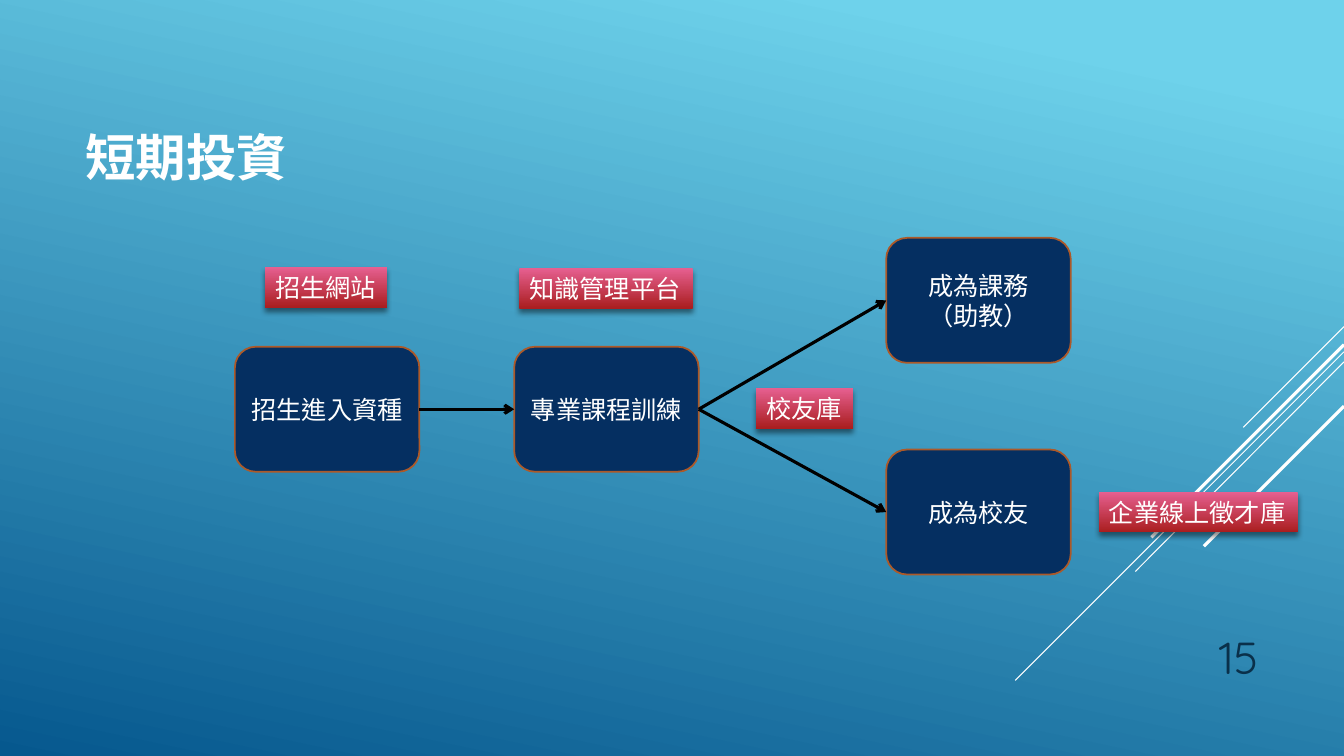
from lxml import etree
from pptx import Presentation, util as u
from pptx.dml import color
from pptx.enum import lang, shapes, text
from pptx.oxml import ns

PX = 9144
FONT = "Quicksand"
WHITE, BLACK, NAVY, RUST, INK = "FFFFFF", "000000", "052F61", "AC5929", "0A304A"
STEP_W, STEP_H = 183, 124
LABEL_H = 40
RAYS = [
    (1333, 324, 1233, 424, 0.75),
    (1333, 349, 1007, 675, 0.75),
    (1333, 359, 1126, 567, 0.75),
    (1333, 342, 1142, 533, 2.25),
    (1333, 403, 1194, 542, 2.25),
]
STEPS = {
    "enroll": (233, 344, "招生進入資種"),
    "training": (510, 344, "專業課程訓練"),
    "assistant": (879, 236, "成為課務\n（助教）"),
    "alumni": (879, 446, "成為校友"),
}
FLOWS = [("enroll", "training"), ("training", "assistant"), ("training", "alumni")]
SYSTEMS = [
    (263, 265, 121, "招生網站"),
    (515, 266, 172, "知識管理平台"),
    (750, 385, 96, "校友庫"),
    (1090, 488, 197, "企業線上徵才庫"),
]


def px(*lengths):
    """Turn px lengths into EMU."""
    return [u.Emu(length * PX) for length in lengths]


def rgb(value):
    """Turn a hex string into a colour."""
    return color.RGBColor.from_string(value)


def write(shape, words, size=18, fill=WHITE, bold=False, align="LEFT", anchor="MIDDLE", wrap=True):
    """Write one paragraph per line of words into a shape."""
    frame = shape.text_frame
    frame.word_wrap = wrap
    frame.vertical_anchor = text.MSO_ANCHOR[anchor]
    frame.text = words
    for paragraph in frame.paragraphs:
        paragraph.alignment = text.PP_ALIGN[align]
        for run in paragraph.runs:
            run.font.name = FONT
            run.font.size = u.Pt(size)
            run.font.bold = bold
            run.font.color.rgb = rgb(fill)
            run.font.language_id = lang.MSO_LANGUAGE_ID.TRADITIONAL_CHINESE


def shade(fill, stops, clockwise):
    """Give a fill a two-stop linear gradient."""
    fill.gradient()
    fill.gradient_angle = 360 - clockwise
    for stop, (position, value) in zip(fill.gradient_stops, stops):
        stop.position = position
        stop.color.rgb = rgb(value)


def add_line(slide, ends, value, width):
    """Draw a straight line without a shadow."""
    line = slide.shapes.add_connector(shapes.MSO_CONNECTOR.STRAIGHT, *px(*ends))
    line.line.color.rgb = rgb(value)
    line.line.width = u.Pt(width)
    etree.SubElement(line._element.spPr, ns.qn("a:effectLst"))
    return line


def add_backdrop(slide):
    """Shade the background and draw its diagonal rays."""
    shade(slide.background.fill, [(0.1, "6ED2EB"), (1, "06588E")], 102)
    for *ends, width in RAYS:
        add_line(slide, ends, WHITE, width)


def add_text(slide, box, words, **style):
    """Place a text box."""
    write(slide.shapes.add_textbox(*px(*box)), words, **style)


def add_step(slide, left, top, words):
    """Place a rounded process step."""
    step = slide.shapes.add_shape(
        shapes.MSO_SHAPE.ROUNDED_RECTANGLE, *px(left, top, STEP_W, STEP_H))
    step.shadow.inherit = False
    step.fill.solid()
    step.fill.fore_color.rgb = rgb(NAVY)
    step.line.color.rgb = rgb(RUST)
    step.line.width = u.Pt(1.25)
    write(step, words, align="CENTER")
    return step


def add_flow(slide, source, target):
    """Join the right side of one step to the left side of another by an arrow."""
    flow = add_line(slide, (0, 0, 0, 0), BLACK, 2.25)
    flow.begin_connect(source, 3)
    flow.end_connect(target, 1)
    etree.SubElement(flow.line._get_or_add_ln(), ns.qn("a:tailEnd"), type="arrow")


def add_system(slide, left, top, width, words):
    """Place a red label with a soft shadow below it."""
    label = slide.shapes.add_shape(
        shapes.MSO_SHAPE.RECTANGLE, *px(left, top, width, LABEL_H))
    label.shadow.inherit = False
    shade(label.fill, [(0, "E66091"), (1, "AA1E1F")], 90)
    label.line.fill.background()
    effects = label._element.spPr.find(ns.qn("a:effectLst"))
    shadow = etree.SubElement(
        effects, ns.qn("a:outerShdw"), blurRad=str(u.Pt(4)), dist=str(u.Pt(3)),
        dir="5400000", rotWithShape="0")
    tint = etree.SubElement(shadow, ns.qn("a:srgbClr"), val=BLACK)
    etree.SubElement(tint, ns.qn("a:alpha"), val="46000")
    write(label, words, anchor="TOP", wrap=False)
    label.text_frame.auto_size = text.MSO_AUTO_SIZE.SHAPE_TO_FIT_TEXT


def add_process(slide):
    """Draw the steps, the arrows between them and the system labels."""
    steps = {key: add_step(slide, *step) for key, step in STEPS.items()}
    for source, target in FLOWS:
        add_flow(slide, steps[source], steps[target])
    for system in SYSTEMS:
        add_system(slide, *system)


def main():
    """Build and save the slide."""
    deck = Presentation()
    deck.slide_width, deck.slide_height = px(1333, 750)
    slide = deck.slides.add_slide(deck.slide_layouts[6])
    add_backdrop(slide)
    add_text(slide, (75, 73, 933, 165), "短期投資", size=36, bold=True)
    add_text(slide, (1133, 610, 125, 73), "15", size=32, fill=INK, align="RIGHT", anchor="BOTTOM")
    add_process(slide)
    deck.save("out.pptx")


if __name__ == "__main__":
    main()
